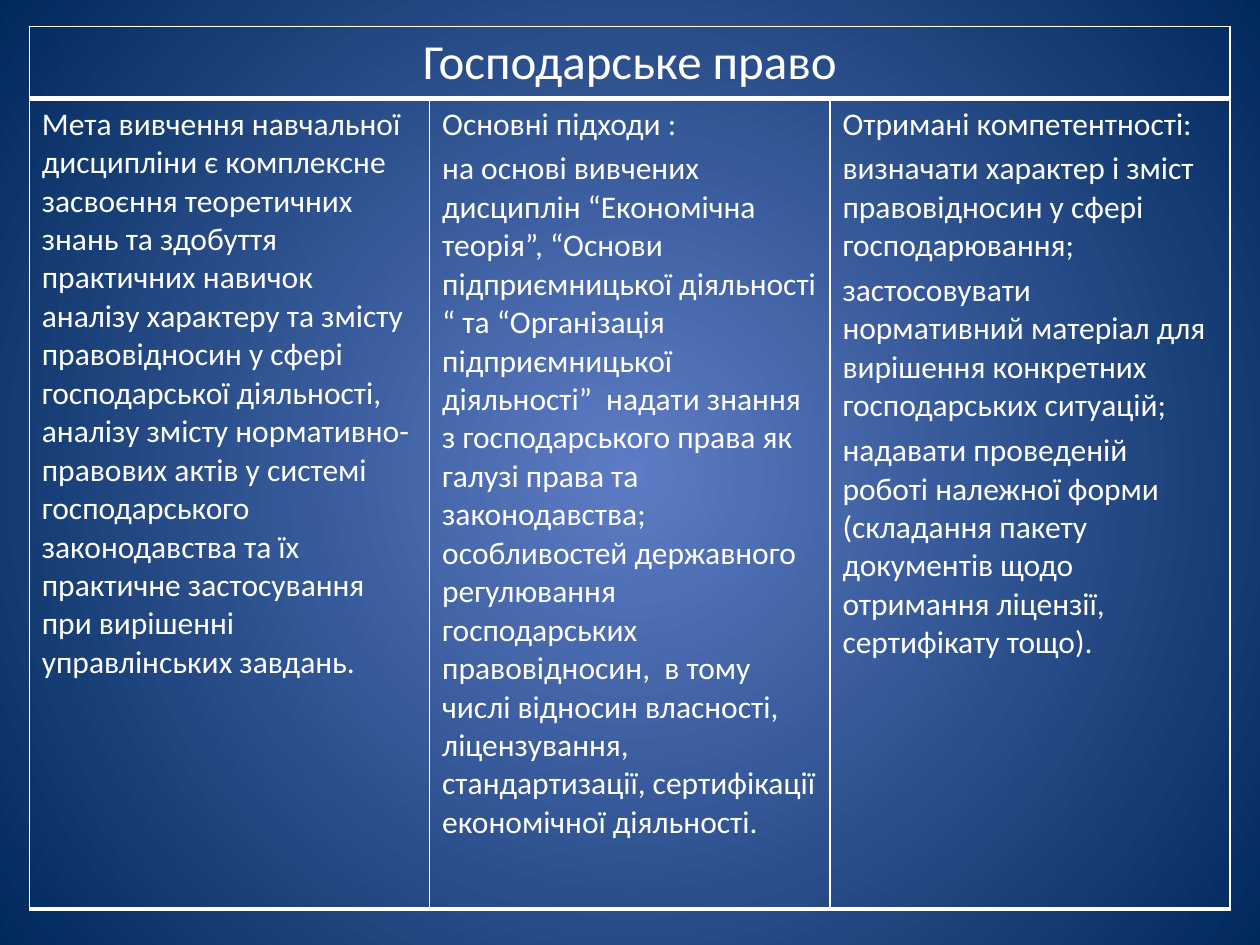
"""Build a slide with a course summary table: aim, approaches and competences."""
import lxml.etree
import pptx
import pptx.dml.color
import pptx.enum.text
import pptx.oxml.ns
import pptx.util
from pptx.util import Cm

WHITE = pptx.dml.color.RGBColor(0xFF, 0xFF, 0xFF)
CENTRE_BLUE = pptx.dml.color.RGBColor(0x5E, 0x7C, 0xC5)
EDGE_BLUE = pptx.dml.color.RGBColor(0x00, 0x29, 0x5C)
FONT = "Calibri"
BODY_SIZE = 18
TITLE_SIZE = 28
THIN, THICK = 1, 3

TITLE = "Господарське право"
COLUMNS = [
    [
        "Мета вивчення навчальної дисципліни є комплексне засвоєння теоретичних знань "
        "та здобуття практичних навичок аналізу характеру та змісту правовідносин у сфері "
        "господарської діяльності, аналізу змісту нормативно-правових актів у системі "
        "господарського  законодавства та їх практичне застосування при вирішенні "
        "управлінських завдань.",
    ],
    [
        "Основні підходи :",
        "на основі вивчених дисциплін “Економічна теорія”, “Основи підприємницької "
        "діяльності “ та “Організація підприємницької діяльності”  надати знання з "
        "господарського права як галузі права та законодавства; особливостей державного "
        "регулювання господарських правовідносин,  в тому числі відносин власності, "
        "ліцензування, стандартизації, сертифікації економічної діяльності.",
    ],
    [
        "Отримані компетентності:",
        "визначати характер і зміст правовідносин у сфері господарювання;",
        "застосовувати нормативний матеріал для вирішення конкретних господарських ситуацій;",
        "надавати проведеній роботі належної форми (складання пакету документів щодо "
        "отримання ліцензії, сертифікату тощо).",
    ],
]


def add_child(parent, tag, **attributes):
    """Append a DrawingML element to the parent and return it."""
    return lxml.etree.SubElement(parent, pptx.oxml.ns.qn(tag), attributes)


def set_radial_background(slide):
    """Fill the slide background with a circular gradient from its centre."""
    fill = slide.background.fill
    fill.gradient()
    for stop, color in zip(fill.gradient_stops, (CENTRE_BLUE, EDGE_BLUE)):
        stop.color.rgb = color
    gradient = next(slide.element.iter(pptx.oxml.ns.qn("a:gradFill")))
    gradient.remove(gradient.find(pptx.oxml.ns.qn("a:lin")))
    circle = add_child(gradient, "a:path", path="circle")
    add_child(circle, "a:fillToRect", l="50000", t="50000", r="50000", b="50000")


def style_cell(cell, top_width):
    """Give a cell white borders and no fill."""
    properties = cell._tc.get_or_add_tcPr()
    widths = {"a:lnL": THIN, "a:lnR": THIN, "a:lnT": top_width, "a:lnB": THICK}
    for tag, width in widths.items():
        line = add_child(properties, tag, w=str(pptx.util.Pt(width)))
        add_child(add_child(line, "a:solidFill"), "a:srgbClr", val=str(WHITE))
    cell.fill.background()


def write_cell(cell, texts, size, alignment):
    """Write one paragraph per text, spaced by a fifth of the text size."""
    frame = cell.text_frame
    for index, text in enumerate(texts):
        paragraph = frame.add_paragraph() if index else frame.paragraphs[0]
        paragraph.alignment = alignment
        if index:
            paragraph.space_before = pptx.util.Pt(size * 0.2)
        run = paragraph.add_run()
        run.text = text
        run.font.name = FONT
        run.font.size = pptx.util.Pt(size)
        run.font.bold = False
        run.font.color.rgb = WHITE


def add_course_table(slide):
    """Add the table with a merged title row above the text columns."""
    frame = slide.shapes.add_table(2, len(COLUMNS), Cm(0.59), Cm(0.53), Cm(24.21), Cm(17.73))
    table = frame.table
    table.first_row = table.horz_banding = False
    for row, height in zip(table.rows, (1.4, 16.33)):
        row.height = Cm(height)
    for index, texts in enumerate(COLUMNS):
        style_cell(table.cell(0, index), THIN)
        style_cell(table.cell(1, index), THICK)
        write_cell(table.cell(1, index), texts, BODY_SIZE, pptx.enum.text.PP_ALIGN.LEFT)
    title_cell = table.cell(0, 0)
    title_cell.merge(table.cell(0, len(COLUMNS) - 1))
    write_cell(title_cell, [TITLE], TITLE_SIZE, pptx.enum.text.PP_ALIGN.CENTER)


def main():
    """Create and save the presentation."""
    presentation = pptx.Presentation()
    presentation.slide_width = Cm(25.4)
    presentation.slide_height = Cm(19.05)
    slide = presentation.slides.add_slide(presentation.slide_layouts[6])
    set_radial_background(slide)
    add_course_table(slide)
    presentation.save("out.pptx")


if __name__ == "__main__":
    main()
